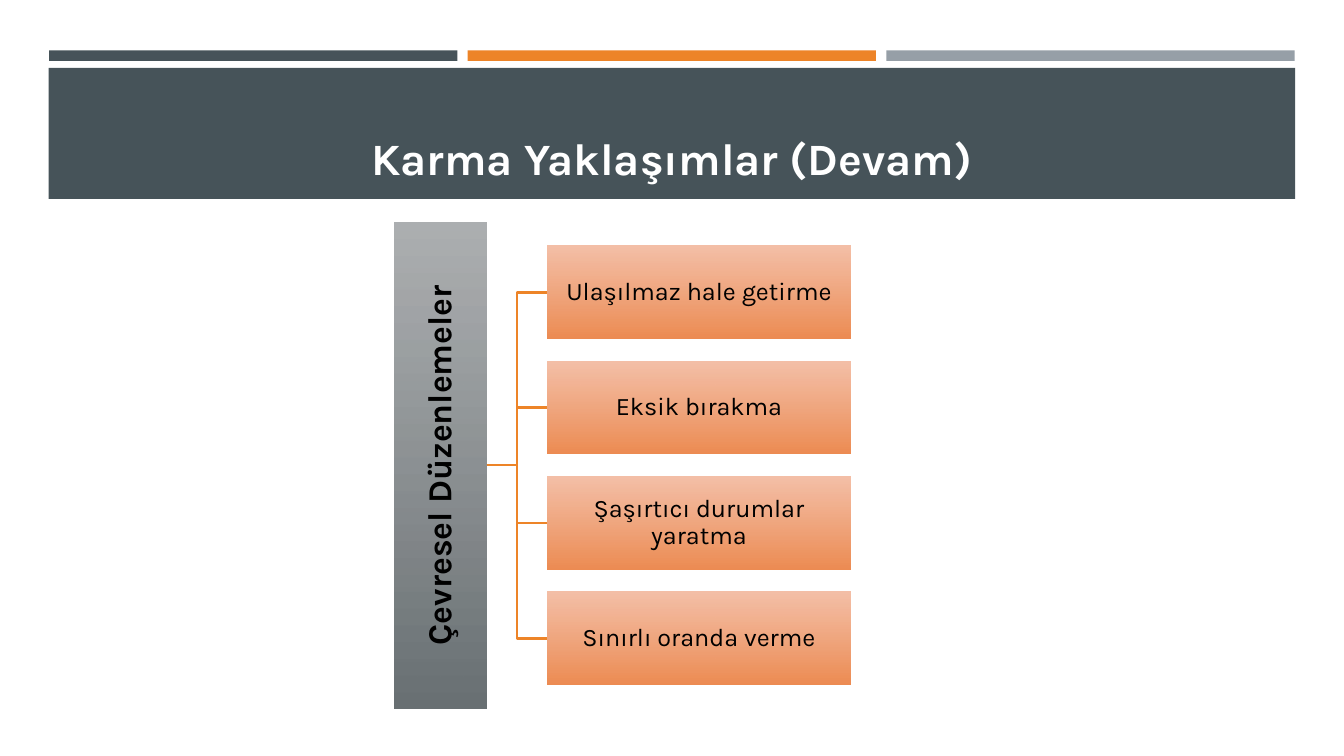
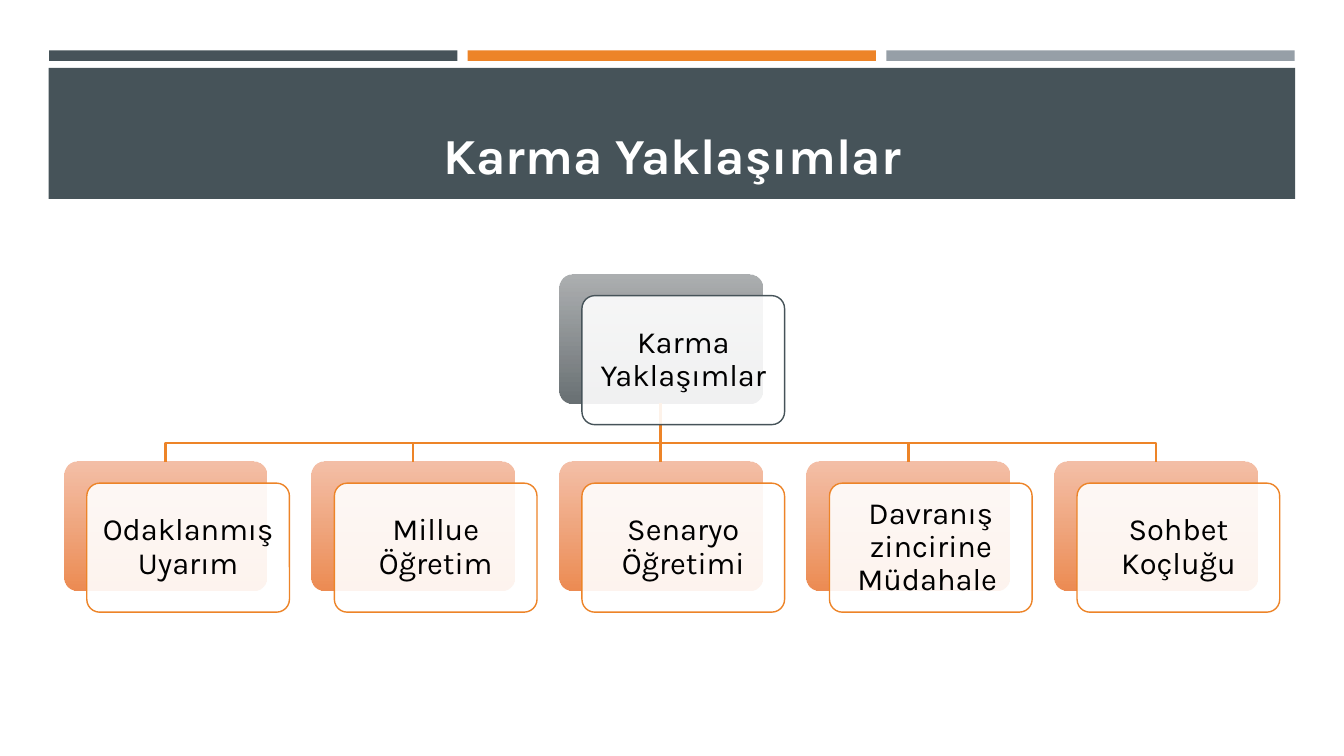
from dataclasses import dataclass

from lxml import etree
from pptx import Presentation
from pptx.dml.color import RGBColor
from pptx.enum.shapes import MSO_CONNECTOR, MSO_SHAPE
from pptx.enum.text import MSO_ANCHOR, PP_ALIGN
from pptx.oxml.ns import qn
from pptx.util import Inches, Pt

RECT = MSO_SHAPE.RECTANGLE
ROUNDED = MSO_SHAPE.ROUNDED_RECTANGLE
STRAIGHT = MSO_CONNECTOR.STRAIGHT
MIDDLE, BOTTOM_ANCHOR = MSO_ANCHOR.MIDDLE, MSO_ANCHOR.BOTTOM
CENTER = PP_ALIGN.CENTER
TOP, LEFT, BOTTOM, RIGHT = range(4)


@dataclass(frozen=True)
class Theme:
    font: str = "Karla"
    slate: str = "465359"
    orange: str = "ED8428"
    silver: str = "969FA7"
    white: str = "FFFFFF"
    black: str = "000000"
    slate_fade: tuple = ("A3A6A8", "697073")
    orange_fade: tuple = ("F3B89D", "ED8C53")
    opacity: int = 90
    title_size: int = 36
    long_title_size: int = 32
    root_size: int = 24
    card_size: int = 22
    item_size: int = 18
    link_width: float = 1.75
    card_border: float = 1


THEME = Theme()


def rgb(color):
    return RGBColor.from_string(color)


def set_opacity(color_element, percent):
    etree.SubElement(color_element, qn("a:alpha")).set("val", str(percent * 1000))


def write(shape, text, size, color=THEME.black, bold=False, anchor=MIDDLE,
          spacing=0.9, inset=0.01, upward=False):
    frame = shape.text_frame
    frame.word_wrap = True
    frame.vertical_anchor = anchor
    if inset is not None:
        frame.margin_left = frame.margin_right = Inches(inset)
        frame.margin_top = frame.margin_bottom = Inches(inset)
    if upward:
        shape.element.txBody.find(qn("a:bodyPr")).set("vert", "vert270")
    paragraph = frame.paragraphs[0]
    paragraph.alignment = CENTER
    paragraph.line_spacing = spacing
    run = paragraph.add_run()
    run.text = text
    run.font.name = THEME.font
    run.font.size = Pt(size)
    run.font.bold = bold
    run.font.color.rgb = rgb(color)


def port(shape, site):
    x = {LEFT: 0, RIGHT: shape.width}.get(site, shape.width // 2)
    y = {TOP: 0, BOTTOM: shape.height}.get(site, shape.height // 2)
    return shape.left + x, shape.top + y


class Deck:
    def __init__(self, theme):
        self.theme = theme
        self.presentation = Presentation()
        self.presentation.slide_width = Inches(13.33)
        self.presentation.slide_height = Inches(7.5)
        self.slide = None

    def x(self, percent):
        return round(self.presentation.slide_width * percent / 100)

    def y(self, percent):
        return round(self.presentation.slide_height * percent / 100)

    def area(self, left, top, width, height):
        return self.x(left), self.y(top), self.x(width), self.y(height)

    def add_slide(self, title, size):
        self.slide = self.presentation.slides.add_slide(self.presentation.slide_layouts[6])
        theme = self.theme
        for column, color in enumerate((theme.slate, theme.orange, theme.silver)):
            self.box((3.65 + column * 31.15, 6.67, 30.38, 1.4), color)
        self.box((3.62, 8.97, 92.74, 17.33), theme.slate)
        heading = self.slide.shapes.add_textbox(*self.area(4.77, 10.22, 90.47, 14.8))
        write(heading, title, size, color=theme.white, bold=True,
              anchor=BOTTOM_ANCHOR, spacing=1, inset=None)

    def box(self, place, fill, outline=None, rounded=False, opacity=100):
        shape = self.slide.shapes.add_shape(ROUNDED if rounded else RECT, *self.area(*place))
        shape.shadow.inherit = False
        if rounded:
            shape.adjustments[0] = 0.1
        if isinstance(fill, tuple):
            shape.fill.gradient()
            shape.fill.gradient_angle = 270
            for stop, color in zip(shape.fill.gradient_stops, fill):
                stop.color.rgb = rgb(color)
        else:
            shape.fill.solid()
            shape.fill.fore_color.rgb = rgb(fill)
        if opacity < 100:
            set_opacity(next(shape.element.spPr.iter(qn("a:srgbClr"))), opacity)
        if outline:
            shape.line.color.rgb = rgb(outline)
            shape.line.width = Pt(self.theme.card_border)
        else:
            shape.line.fill.background()
        return shape

    def block(self, place, fade, text, **text_format):
        shape = self.box(place, fade, opacity=self.theme.opacity)
        write(shape, text, **text_format)
        return shape

    def backing(self, place, fade):
        return self.box(place, fade, rounded=True, opacity=self.theme.opacity)

    def card(self, place, outline, text):
        left, top, width, height = place
        shape = self.box((left + 1.68, top + 2.84, width, height), self.theme.white,
                         outline, rounded=True, opacity=self.theme.opacity)
        write(shape, text, self.theme.card_size, inset=0.09)

    def style_link(self, link):
        link.line.color.rgb = rgb(self.theme.orange)
        link.line.width = Pt(self.theme.link_width)

    def straight_link(self, root, exit_site, leaf, entry_site):
        link = self.slide.shapes.add_connector(
            STRAIGHT, *port(root, exit_site), *port(leaf, entry_site))
        self.style_link(link)
        etree.SubElement(link.element.spPr, qn("a:effectLst"))
        link.begin_connect(root, exit_site)
        link.end_connect(leaf, entry_site)

    def bent_link(self, points):
        outline = self.slide.shapes.build_freeform(*points[0])
        outline.add_line_segments(points[1:], close=False)
        link = outline.convert_to_shape()
        link.shadow.inherit = False
        link.fill.background()
        self.style_link(link)

    def tree(self, root, leaves, rail, sideways=False):
        exit_site, entry_site = (RIGHT, LEFT) if sideways else (BOTTOM, TOP)

        def on_rail(point):
            return (self.x(rail), point[1]) if sideways else (point[0], self.y(rail))

        hub = port(root, exit_site)
        for leaf in reversed(leaves):
            entry = port(leaf, entry_site)
            if on_rail(hub) == on_rail(entry):
                self.straight_link(root, exit_site, leaf, entry_site)
            else:
                self.bent_link([hub, on_rail(hub), on_rail(entry), entry])


def add_arrangements(deck):
    theme = deck.theme
    deck.add_slide("Karma Yaklaşımlar (Devam)", theme.long_title_size)
    root = deck.block((29.32, 29.4, 6.9, 64.27), theme.slate_fade, "Çevresel Düzenlemeler",
                      size=theme.root_size, bold=True, inset=0.02, upward=True)
    arrangements = ("Ulaşılmaz hale getirme", "Eksik bırakma",
                    "Şaşırtıcı durumlar yaratma", "Sınırlı oranda verme")
    items = [deck.block((40.72, 32.53 + row * 15.26, 22.58, 12.27), theme.orange_fade,
                        text, size=theme.item_size)
             for row, text in enumerate(arrangements)]
    deck.tree(root, items, rail=38.47, sideways=True)


def add_approaches(deck):
    theme = deck.theme
    deck.add_slide("Karma Yaklaşımlar", theme.title_size)
    approaches = ("Odaklanmış Uyarım", "Millue Öğretim", "Senaryo Öğretimi",
                  "Davranış zincirine Müdahale ", "Sohbet Koçluğu")
    places = [(4.78 + column * 18.42, 61.07, 15.08, 17.07) for column in range(len(approaches))]
    root_place = (places[2][0], 36.27, 15.08, 17.07)
    root = deck.backing(root_place, theme.slate_fade)
    leaves = [deck.backing(place, theme.orange_fade) for place in places]
    deck.tree(root, leaves, rail=58.6)
    deck.card(root_place, theme.slate, "Karma Yaklaşımlar")
    for place, approach in zip(places, approaches):
        deck.card(place, theme.orange, approach)


def main():
    deck = Deck(THEME)
    add_arrangements(deck)
    add_approaches(deck)
    deck.presentation.save("out.pptx")


if __name__ == "__main__":
    main()
